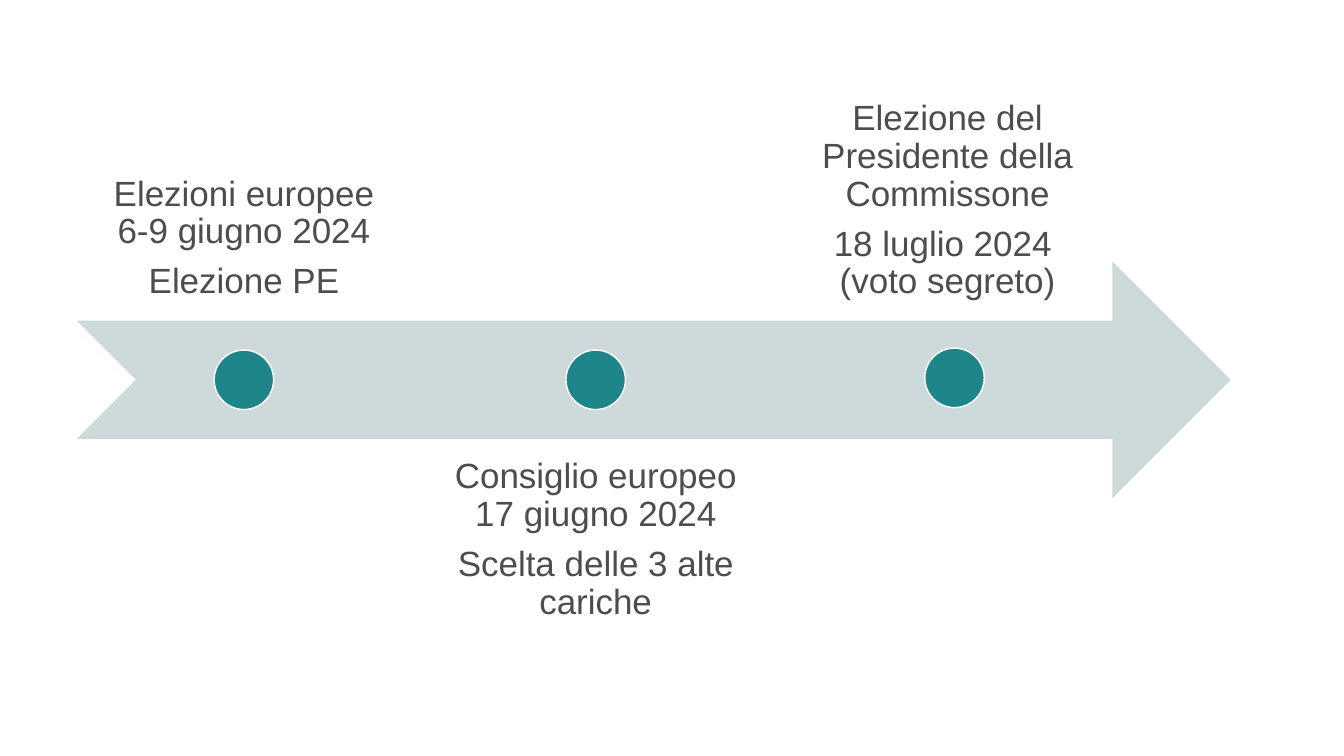
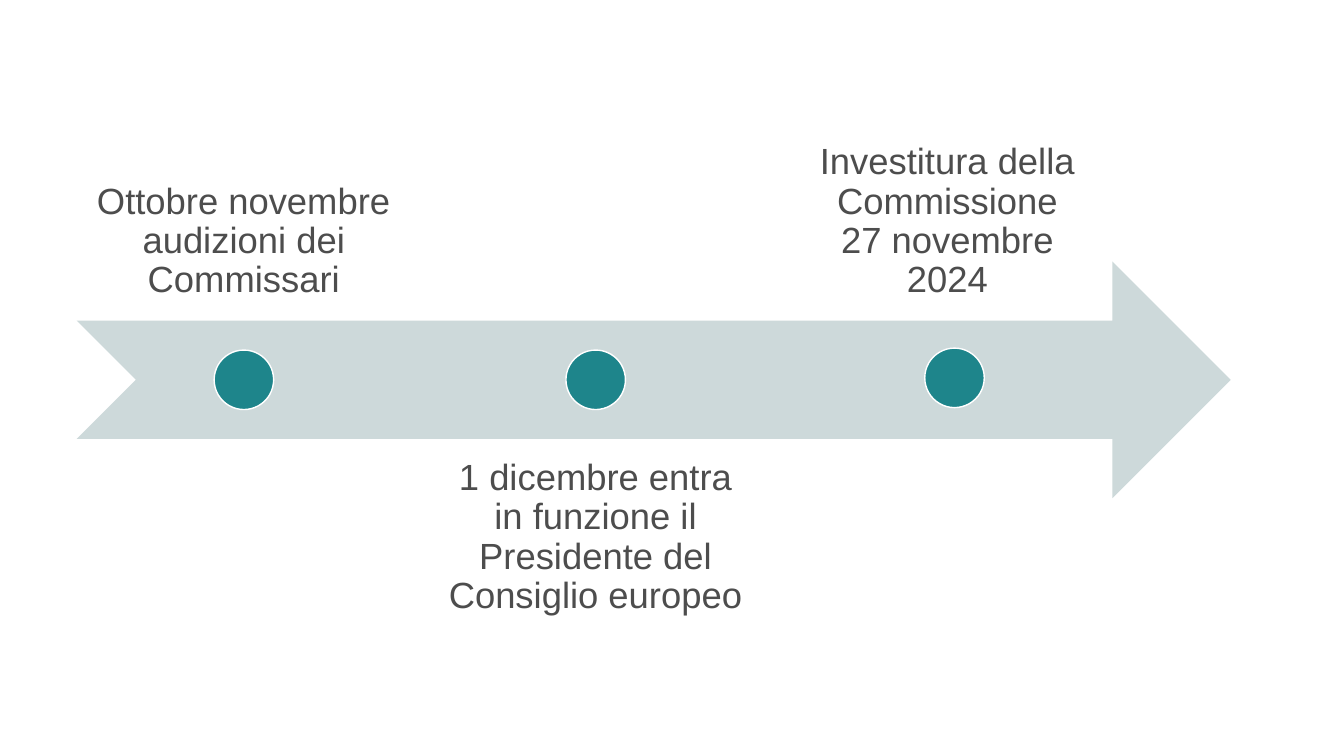
from dataclasses import dataclass

import pptx
import pptx.dml.color
import pptx.enum.shapes
import pptx.enum.text
import pptx.util

Pt = pptx.util.Pt
Color = pptx.dml.color.RGBColor
Shape = pptx.enum.shapes.MSO_SHAPE
Anchor = pptx.enum.text.MSO_ANCHOR
Align = pptx.enum.text.PP_ALIGN


@dataclass(frozen=True)
class Theme:
    font: str = "Arial"
    text: Color = Color(0x4D, 0x4D, 0x4D)
    arrow: Color = Color(0xCD, 0xD9, 0xDA)
    dot: Color = Color(0x1E, 0x85, 0x8B)
    edge: Color = Color(0xFF, 0xFF, 0xFF)
    large: float = 26
    small: float = 25


@dataclass(frozen=True)
class Box:
    left: float
    top: float
    width: float
    height: float

    def place(self) -> tuple:
        return Pt(self.left), Pt(self.top), Pt(self.width), Pt(self.height)


@dataclass(frozen=True)
class Event:
    lines: tuple[str, ...]
    below: bool = False
    right: float = 0
    up: float = 0


@dataclass(frozen=True)
class Page:
    size: float
    inset: float
    events: tuple[Event, ...]


THEME = Theme()
ARROW = Box(54.7, 186.7, 824.4, 169.2)
STEP = 251.3
WIDTH = 239
DOT = 42.5

PAGES = (
    Page(THEME.small, 13.7, (
        Event(("Elezioni europee 6-9 giugno 2024", "Elezione PE")),
        Event(("Consiglio europeo 17 giugno 2024", "Scelta delle 3 alte cariche"), below=True),
        Event(("Elezione del Presidente della Commissone",
               "18 luglio 2024 \n(voto segreto)"), right=5, up=1.4),
    )),
    Page(THEME.large, 14.4, (
        Event(("Ottobre novembre audizioni dei Commissari",)),
        Event(("1 dicembre entra in funzione il Presidente del Consiglio europeo",), below=True),
        Event(("Investitura della Commissione\n27 novembre 2024",), right=5, up=1.4),
    )),
)


def draw_shape(slide, kind: Shape, box: Box, fill: Color, edge: Color | None = None) -> None:
    shape = slide.shapes.add_shape(kind, *box.place())
    shape.shadow.inherit = False
    shape.fill.solid()
    shape.fill.fore_color.rgb = fill
    if edge is None:
        shape.line.fill.background()
    else:
        shape.line.color.rgb = edge
        shape.line.width = Pt(1)


def draw_label(slide, box: Box, event: Event, page: Page) -> None:
    frame = slide.shapes.add_textbox(*box.place()).text_frame
    frame.word_wrap = True
    frame.vertical_anchor = Anchor.TOP if event.below else Anchor.BOTTOM
    frame.margin_left = frame.margin_right = Pt(page.inset)
    frame.margin_top = frame.margin_bottom = Pt(page.inset)
    for index, line in enumerate(event.lines):
        para = frame.add_paragraph() if index else frame.paragraphs[0]
        para.alignment = Align.CENTER
        para.line_spacing = 0.9
        if index:
            para.space_before = Pt(0.35 * page.size)
        for order, part in enumerate(line.split("\n")):
            if order:
                para.add_line_break()
            run = para.add_run()
            run.text = part
            run.font.name = THEME.font
            run.font.size = Pt(page.size)
            run.font.color.rgb = THEME.text


def draw_event(slide, index: int, event: Event, page: Page) -> None:
    left = ARROW.left + index * STEP
    shift = 0.75 * ARROW.height
    top = ARROW.top + (shift if event.below else -shift)
    draw_label(slide, Box(left, top, WIDTH, ARROW.height), event, page)
    dot = Box(left + (WIDTH - DOT) / 2 + event.right,
              ARROW.top + (ARROW.height - DOT) / 2 - event.up, DOT, DOT)
    draw_shape(slide, Shape.OVAL, dot, THEME.dot, THEME.edge)


def main() -> None:
    deck = pptx.Presentation()
    deck.slide_width, deck.slide_height = Pt(960), Pt(540)
    for page in PAGES:
        slide = deck.slides.add_slide(deck.slide_layouts[6])
        draw_shape(slide, Shape.NOTCHED_RIGHT_ARROW, ARROW, THEME.arrow)
        for index, event in enumerate(page.events):
            draw_event(slide, index, event, page)
    deck.save("out.pptx")


if __name__ == "__main__":
    main()
